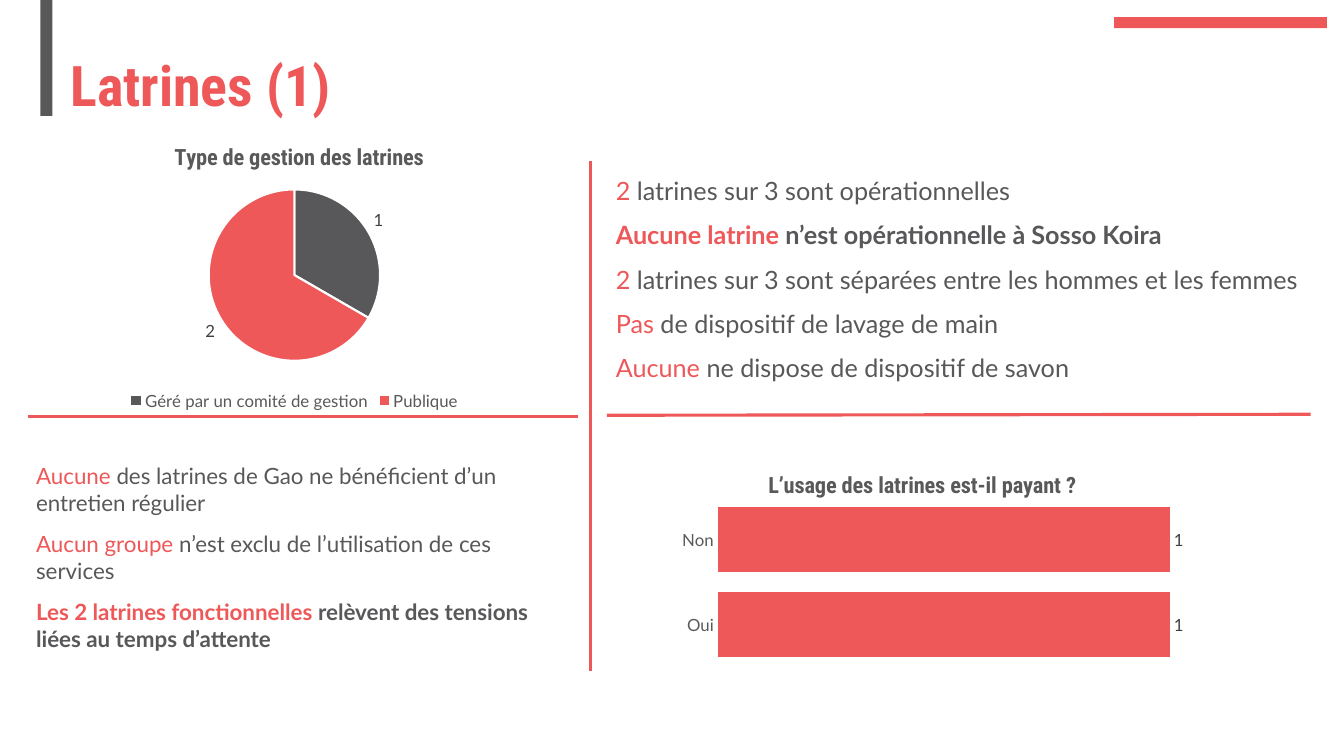
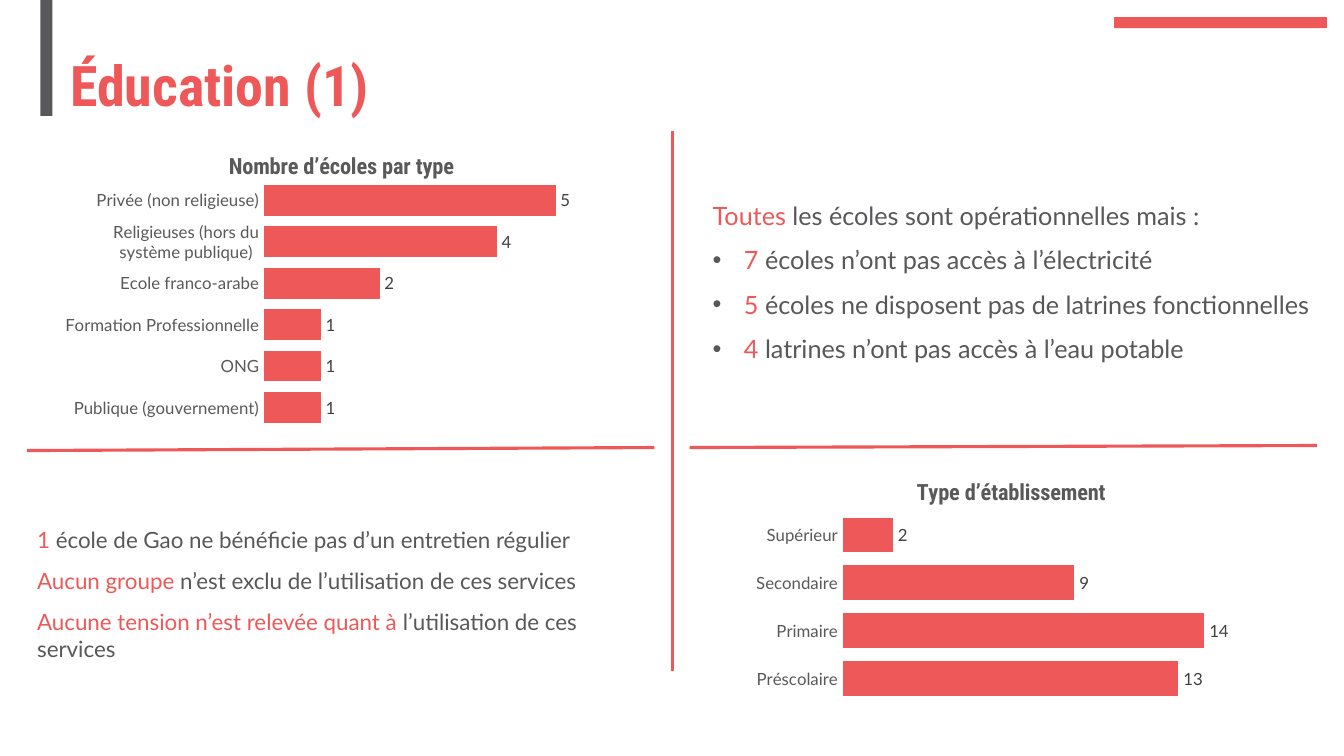
from dataclasses import dataclass

from lxml.etree import SubElement
from pptx import Presentation
from pptx.chart.data import CategoryChartData
from pptx.dml.color import RGBColor
from pptx.enum.chart import (
    XL_CHART_TYPE,
    XL_LABEL_POSITION,
    XL_LEGEND_POSITION,
    XL_TICK_MARK,
)
from pptx.enum.shapes import MSO_CONNECTOR, MSO_SHAPE
from pptx.enum.text import MSO_ANCHOR
from pptx.oxml.ns import qn
from pptx.util import Inches, Pt


@dataclass(frozen=True)
class Theme:
    accent: str = "EE5859"
    dark: str = "58585A"
    chart_text: str = "595959"
    label_text: str = "404040"
    white: str = "FFFFFF"
    heading_font: str = "Roboto Condensed"
    body_font: str = "Lato"
    title_size: int = 40
    large_size: int = 18
    body_size: int = 16
    label_size: int = 12
    rule_width: float = 2.25


@dataclass(frozen=True)
class Box:
    left: float
    top: float
    width: float
    height: float

    def lengths(self):
        return [Inches(n) for n in (self.left, self.top, self.width, self.height)]


@dataclass(frozen=True)
class Statement:
    highlight: str
    rest: str
    bold: bool = False
    bullet: bool = False


@dataclass(frozen=True)
class ChartContent:
    title: str
    categories: tuple
    values: tuple
    title_offset: tuple
    plot: Box
    maximum: float = 0
    outline: float = 0


THEME = Theme()


def rgb(color):
    return RGBColor.from_string(color)


def apply_values(target, **values):
    for name, value in values.items():
        setattr(target, name, value)


def style_font(font, size, color, name=THEME.body_font, bold=False):
    apply_values(font, size=Pt(size), name=name, bold=bold)
    font.color.rgb = rgb(color)


def add_band(slide, box, color):
    shape = slide.shapes.add_shape(MSO_SHAPE.RECTANGLE, *box.lengths())
    shape.shadow.inherit = False
    shape.fill.solid()
    shape.fill.fore_color.rgb = rgb(color)
    shape.line.fill.background()


def add_text_frame(slide, box):
    text_frame = slide.shapes.add_textbox(*box.lengths()).text_frame
    text_frame.word_wrap = True
    return text_frame


def add_header(slide, title):
    add_band(slide, Box(11.05, 0.17, 2.11, 0.11), THEME.accent)
    add_band(slide, Box(0.4, 0, 0.12, 1.15), THEME.dark)
    text_frame = add_text_frame(slide, Box(0.6, 0.54, 4.87, 0.67))
    text_frame.vertical_anchor = MSO_ANCHOR.MIDDLE
    paragraph = text_frame.paragraphs[0]
    paragraph.line_spacing = 0.9
    run = paragraph.add_run()
    run.text = title
    style_font(run.font, THEME.title_size, THEME.accent, THEME.heading_font, True)


def add_rule(slide, start, end):
    points = [Inches(n) for n in (*start, *end)]
    connector = slide.shapes.add_connector(MSO_CONNECTOR.STRAIGHT, *points)
    connector.line.color.rgb = rgb(THEME.accent)
    connector.line.width = Pt(THEME.rule_width)
    SubElement(connector.element.spPr, qn("a:effectLst"))


def add_bullet(paragraph):
    properties = paragraph._p.get_or_add_pPr()
    indent = Inches(0.31)
    properties.set("marL", str(indent))
    properties.set("indent", str(-indent))
    bullet_color = SubElement(properties, qn("a:buClr"))
    SubElement(bullet_color, qn("a:srgbClr")).set("val", THEME.dark)
    SubElement(properties, qn("a:buFont")).set("typeface", "Arial")
    SubElement(properties, qn("a:buChar")).set("char", "•")


def add_statements(slide, box, statements, size):
    text_frame = add_text_frame(slide, box)
    for index, statement in enumerate(statements):
        paragraph = text_frame.add_paragraph() if index else text_frame.paragraphs[0]
        if statement.bullet:
            add_bullet(paragraph)
        if index:
            paragraph.space_before = Pt(10)
        for text, color in (
            (statement.highlight, THEME.accent),
            (statement.rest, THEME.dark),
        ):
            run = paragraph.add_run()
            run.text = text
            style_font(run.font, size, color, bold=statement.bold)


def set_layout(parent, position, fractions, inner=False):
    for layout in parent.findall(qn("c:layout")):
        parent.remove(layout)
    layout = SubElement(parent, qn("c:layout"))
    parent.insert(position, layout)
    manual = SubElement(layout, qn("c:manualLayout"))
    if inner:
        SubElement(manual, qn("c:layoutTarget")).set("val", "inner")
    for mode in ("xMode", "yMode"):
        SubElement(manual, qn(f"c:{mode}")).set("val", "edge")
    for name, value in zip("xywh", fractions):
        SubElement(manual, qn(f"c:{name}")).set("val", f"{value:.4f}")


def add_chart(slide, box, content, chart_type):
    data = CategoryChartData()
    data.categories = content.categories
    data.add_series("Series 1", content.values)
    chart = slide.shapes.add_chart(chart_type, *box.lengths(), data).chart
    style_font(chart.font, THEME.label_size, THEME.chart_text)
    chart.has_legend = False
    chart.has_title = True
    run = chart.chart_title.text_frame.paragraphs[0].add_run()
    run.text = content.title
    style_font(
        run.font, THEME.body_size, THEME.chart_text, THEME.heading_font, True
    )
    left, top = content.title_offset
    set_layout(chart.chart_title.element, 1, (left / box.width, top / box.height))
    plot = content.plot
    fractions = (
        plot.left / box.width,
        plot.top / box.height,
        plot.width / box.width,
        plot.height / box.height,
    )
    plot_area = chart.element.find(".//" + qn("c:plotArea"))
    set_layout(plot_area, 0, fractions, inner=True)
    labels = chart.plots[0].series[0].data_labels
    apply_values(labels, show_value=True, position=XL_LABEL_POSITION.OUTSIDE_END)
    style_font(labels.font, THEME.label_size, THEME.label_text)
    return chart


def paint(chart_format, color, outline):
    chart_format.fill.solid()
    chart_format.fill.fore_color.rgb = rgb(color)
    if outline:
        chart_format.line.color.rgb = rgb(THEME.white)
        chart_format.line.width = Pt(outline)
    else:
        chart_format.line.fill.background()


def add_bar_chart(slide, box, content):
    chart = add_chart(slide, box, content, XL_CHART_TYPE.BAR_CLUSTERED)
    apply_values(chart.plots[0], gap_width=30, vary_by_categories=False)
    paint(chart.plots[0].series[0].format, THEME.accent, content.outline)
    apply_values(
        chart.value_axis,
        visible=False,
        has_major_gridlines=False,
        minimum_scale=0,
        maximum_scale=content.maximum,
    )
    axis = chart.category_axis
    apply_values(
        axis, major_tick_mark=XL_TICK_MARK.NONE, minor_tick_mark=XL_TICK_MARK.NONE
    )
    axis.format.line.fill.background()
    style_font(axis.tick_labels.font, THEME.label_size, THEME.chart_text)


def add_pie_chart(slide, box, content):
    chart = add_chart(slide, box, content, XL_CHART_TYPE.PIE)
    chart.plots[0].vary_by_categories = True
    for index, color in enumerate((THEME.dark, THEME.accent)):
        point = chart.plots[0].series[0].points[index]
        paint(point.format, color, content.outline)
    chart.has_legend = True
    apply_values(
        chart.legend, position=XL_LEGEND_POSITION.BOTTOM, include_in_layout=False
    )
    style_font(chart.legend.font, THEME.label_size, THEME.chart_text)


def add_quadrant_slide(presentation, title, rules, charts, texts):
    slide = presentation.slides.add_slide(presentation.slide_layouts[6])
    add_header(slide, title)
    for draw_chart, box, content in charts:
        draw_chart(slide, box, content)
    for start, end in rules:
        add_rule(slide, start, end)
    for box, size, statements in texts:
        add_statements(slide, box, statements, size)


def add_latrines_slide(presentation):
    management = ChartContent(
        "Type de gestion des latrines",
        ("Géré par un comité de gestion", "Publique"), (1, 2),
        (1.58, 0.16), Box(1.96, 0.66, 1.7, 1.7), outline=1.5,
    )
    payment = ChartContent(
        "L’usage des latrines est-il payant ?", ("Oui", "Non"), (1, 1),
        (0.93, 0.2), Box(0.47, 0.5, 5.38, 1.69), maximum=1.2,
    )
    facilities = (
        Statement("2 ", "latrines sur 3 sont opérationnelles"),
        Statement("Aucune latrine ", "n’est opérationnelle à Sosso Koira", True),
        Statement("2", " latrines sur 3 sont séparées entre les hommes et les femmes"),
        Statement("Pas ", "de dispositif de lavage de main"),
        Statement("Aucune ", "ne dispose de dispositif de savon"),
    )
    upkeep = (
        Statement("Aucune ", "des latrines de Gao ne bénéficient d’un entretien régulier"),
        Statement("Aucun groupe ", "n’est exclu de l’utilisation de ces services"),
        Statement("Les 2 latrines fonctionnelles ",
                  "relèvent des tensions liées au temps d’attente", True),
    )
    add_quadrant_slide(
        presentation, "Latrines (1)",
        (((5.86, 1.6), (5.86, 6.66)), ((6.02, 4.12), (13, 4.11)),
         ((0.28, 4.13), (5.73, 4.13))),
        ((add_pie_chart, Box(0.11, 1.22, 5.62, 2.89), management),
         (add_bar_chart, Box(6.65, 4.43, 5.97, 2.22), payment)),
        ((Box(6.01, 1.69, 7.27, 2.19), THEME.large_size, facilities),
         (Box(0.26, 4.54, 5.53, 2.12), THEME.body_size, upkeep)),
    )


def add_education_slide(presentation):
    schools = ChartContent(
        "Nombre d’écoles par type",
        ("Publique (gouvernement)", "ONG", "Formation Professionnelle",
         "Ecole franco-arabe", "Religieuses (hors du système publique)",
         "Privée (non religieuse)"),
        (1, 1, 1, 2, 4, 5),
        (1.7, 0.26), Box(2.08, 0.57, 3.49, 2.47), maximum=6, outline=0.75,
    )
    levels = ChartContent(
        "Type d’établissement",
        ("Préscolaire", "Primaire", "Secondaire", "Supérieur"), (13, 14, 9, 2),
        (1.66, 0.13), Box(0.96, 0.5, 4.12, 1.9), maximum=16, outline=1.5,
    )
    access = (
        Statement("Toutes ", "les écoles sont opérationnelles mais :"),
        Statement("7 ", "écoles n’ont pas accès à l’électricité", bullet=True),
        Statement("5 ", "écoles ne disposent pas de latrines fonctionnelles", bullet=True),
        Statement("4 ", "latrines n’ont pas accès à l’eau potable", bullet=True),
    )
    upkeep = (
        Statement("1", " école de Gao ne bénéficie pas d’un entretien régulier"),
        Statement("Aucun groupe ", "n’est exclu de l’utilisation de ces services"),
        Statement("Aucune tension n’est relevée quant à ", "l’utilisation de ces services"),
    )
    add_quadrant_slide(
        presentation, "Éducation (1)",
        (((6.67, 1.3), (6.67, 6.66)), ((6.84, 4.44), (13.06, 4.42)),
         ((0.27, 4.47), (6.49, 4.44))),
        ((add_bar_chart, Box(0.53, 1.21, 5.7, 3.09), schools),
         (add_bar_chart, Box(7.39, 4.57, 5.2, 2.45), levels)),
        ((Box(6.97, 1.94, 6.29, 2.04), THEME.large_size, access),
         (Box(0.27, 5.17, 5.96, 1.49), THEME.body_size, upkeep)),
    )


def main():
    presentation = Presentation()
    apply_values(presentation, slide_width=Inches(13.33), slide_height=Inches(7.5))
    add_latrines_slide(presentation)
    add_education_slide(presentation)
    presentation.save("out.pptx")


if __name__ == "__main__":
    main()
